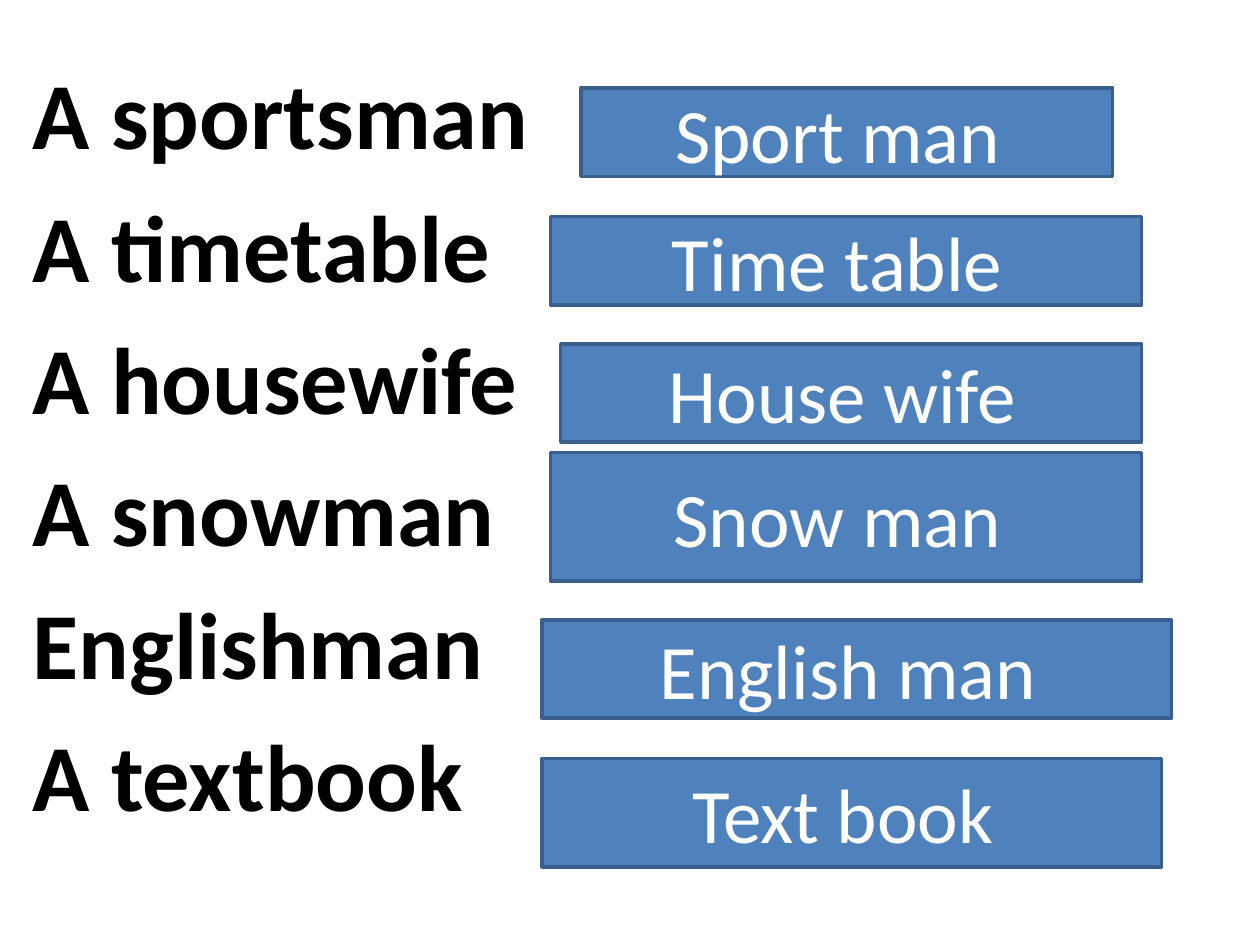
from dataclasses import dataclass

from pptx import Presentation
from pptx.dml.color import RGBColor
from pptx.enum.shapes import MSO_SHAPE as Shape
from pptx.enum.text import MSO_ANCHOR as Anchor, MSO_AUTO_SIZE as AutoSize, PP_ALIGN as Align
from pptx.oxml.xmlchemy import OxmlElement
from pptx.slide import Slide
from pptx.text.text import Font
from pptx.util import Inches, Pt


@dataclass(frozen=True)
class Theme:
    font: str = "Calibri"
    ink: RGBColor = RGBColor(0, 0, 0)
    label: RGBColor = RGBColor(255, 255, 255)
    fill: RGBColor = RGBColor.from_string("4F81BD")
    line: RGBColor = RGBColor.from_string("3A5F8C")
    word_size: int = 54
    label_size: int = 44


@dataclass(frozen=True)
class Compound:
    word: str
    split_word: str
    left: float
    top: float
    width: float
    height: float


THEME = Theme()
COMPOUNDS = [
    Compound("A sportsman", "Sport man ", 4.61, 0.7, 4.22, 0.7),
    Compound("A timetable", "Time table ", 4.37, 1.72, 4.69, 0.7),
    Compound("A housewife", "House wife ", 4.45, 2.73, 4.61, 0.78),
    Compound("A snowman", "Snow man ", 4.37, 3.59, 4.69, 1.02),
    Compound("Englishman", "English man ", 4.3, 4.92, 5, 0.78),
    Compound("A textbook", "Text book ", 4.3, 6.02, 4.92, 0.86),
]


def style_font(font: Font, size: int, color: RGBColor, bold: bool) -> None:
    font.name, font.size, font.bold = THEME.font, Pt(size), bold
    font.color.rgb = color


def fill_words(page: Slide, compounds: list[Compound]) -> None:
    body = page.placeholders[1]
    body.left, body.top = Inches(0.16), Inches(0.39)
    body.width, body.height = Inches(9.61), Inches(6.8)
    frame = body.text_frame
    frame.auto_size = AutoSize.NONE
    frame.text = "\n".join(item.word for item in compounds)
    for para in frame.paragraphs:
        para_props = para._p.get_or_add_pPr()
        para_props.append(OxmlElement("a:buNone"))
        style_font(para.runs[0].font, THEME.word_size, THEME.ink, True)
    frame.paragraphs[0].space_before = Pt(0)


def add_split_box(page: Slide, item: Compound) -> None:
    box = page.shapes.add_shape(
        Shape.RECTANGLE,
        Inches(item.left), Inches(item.top), Inches(item.width), Inches(item.height),
    )
    box.shadow.inherit = False
    box.fill.solid()
    box.fill.fore_color.rgb = THEME.fill
    box.line.color.rgb = THEME.line
    box.line.width = Pt(2)
    frame = box.text_frame
    frame.word_wrap = True
    frame.vertical_anchor = Anchor.MIDDLE
    frame.text = item.split_word
    para = frame.paragraphs[0]
    para.alignment = Align.CENTER
    style_font(para.runs[0].font, THEME.label_size, THEME.label, False)


def main() -> None:
    """Build the slide of compound nouns and their split forms."""
    deck = Presentation()
    deck.slide_width, deck.slide_height = Inches(10), Inches(7.5)
    page = deck.slides.add_slide(deck.slide_layouts[1])
    title = page.shapes.title.element
    title.getparent().remove(title)
    fill_words(page, COMPOUNDS)
    for item in COMPOUNDS:
        add_split_box(page, item)
    deck.save("out.pptx")


if __name__ == "__main__":
    main()
